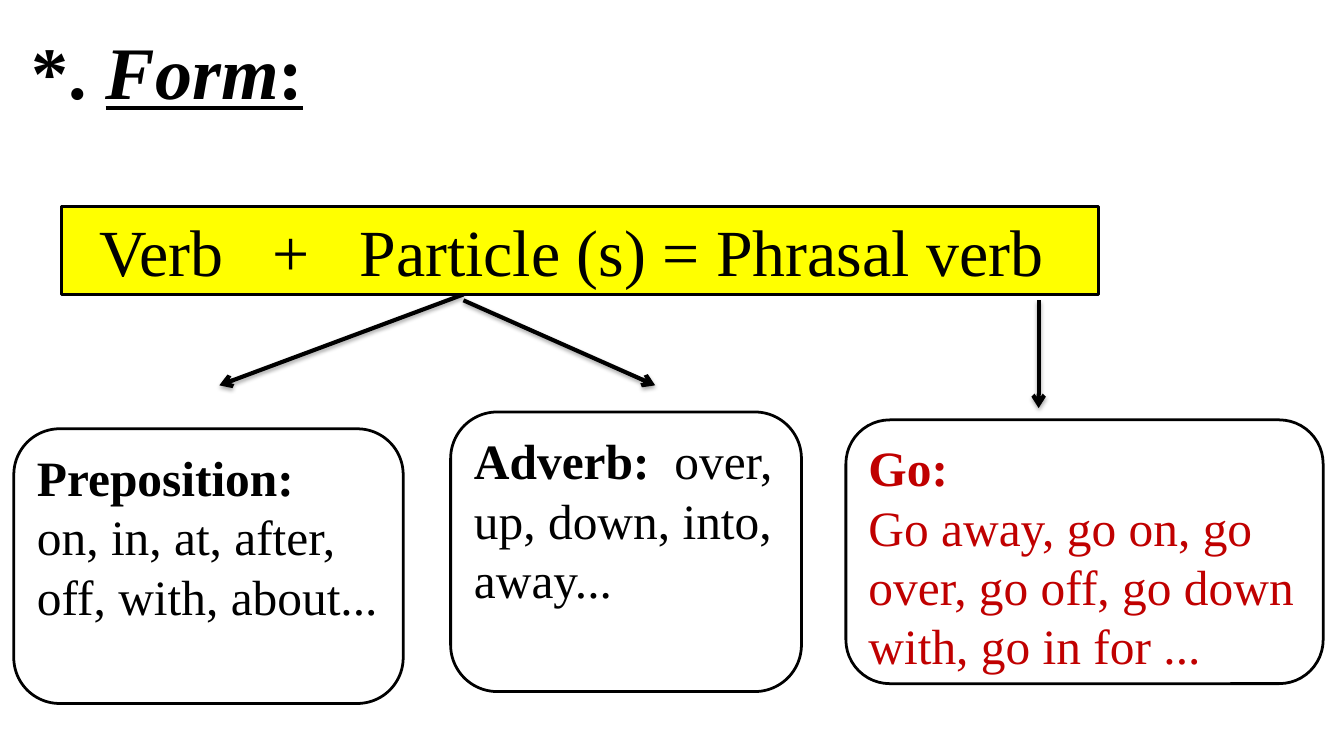
from lxml.etree import SubElement
from pptx import Presentation
from pptx.dml.color import RGBColor
from pptx.enum.shapes import MSO_CONNECTOR, MSO_SHAPE
from pptx.enum.text import MSO_ANCHOR, MSO_AUTO_SIZE, PP_ALIGN
from pptx.oxml.ns import qn
from pptx.util import Inches, Pt

FONT = "Times New Roman"
BLACK, WHITE, YELLOW, RED = "000000", "FFFFFF", "FFFF00", "C00000"


def colour(value):
    """Turn a hex string into a colour."""
    return RGBColor.from_string(value)


def add_run(para, text, size, tint=BLACK, bold=False, italic=False, underline=False, tracking=0):
    """Add one formatted run, with optional tracking in points."""
    run = para.add_run()
    run.text = text
    font = run.font
    font.name, font.size = FONT, Pt(size)
    font.bold, font.italic, font.underline = bold, italic, underline
    font.color.rgb = colour(tint)
    if tracking:
        font._element.set("spc", str(tracking * 100))


def add_title(slide):
    """Place and fill the slide title."""
    title = slide.shapes.title
    title.left, title.top = Inches(0.22), Inches(0.21)
    title.width, title.height = Inches(10.99), Inches(1.01)
    frame = title.text_frame
    frame.auto_size = MSO_AUTO_SIZE.NONE
    frame.vertical_anchor = MSO_ANCHOR.TOP
    para = frame.paragraphs[0]
    para.alignment = PP_ALIGN.LEFT
    para.line_spacing = 1.0
    add_run(para, "*. ", 54, bold=True)
    add_run(para, "Form", 54, bold=True, italic=True, underline=True)
    add_run(para, ":", 54, bold=True, underline=True)


def add_box(slide, kind, bounds, fill):
    """Add an outlined shape and return its text frame."""
    box = slide.shapes.add_shape(kind, *map(Inches, bounds))
    box.shadow.inherit = False
    box.fill.solid()
    box.fill.fore_color.rgb = colour(fill)
    box.line.color.rgb = colour(BLACK)
    box.line.width = Pt(2)
    box.text_frame.word_wrap = True
    return box.text_frame


def add_formula(slide):
    """Add the yellow banner with the phrasal verb formula."""
    frame = add_box(slide, MSO_SHAPE.RECTANGLE, (0.62, 2.09, 10.5, 0.89), YELLOW)
    frame.vertical_anchor = MSO_ANCHOR.MIDDLE
    frame.margin_right = Inches(0.27)
    para = frame.paragraphs[0]
    para.alignment = PP_ALIGN.CENTER
    add_run(para, "Verb", 48)
    add_run(para, " ", 48, tracking=24)
    add_run(para, "+", 48)
    add_run(para, " ", 48, tracking=24)
    add_run(para, "Particle (s) = Phrasal verb", 48)


def add_card(slide, bounds, heading, examples, tint=BLACK, inline=False):
    """Add a rounded card with a bold heading and its examples."""
    frame = add_box(slide, MSO_SHAPE.FLOWCHART_ALTERNATE_PROCESS, bounds, WHITE)
    frame.vertical_anchor = MSO_ANCHOR.TOP
    para = frame.paragraphs[0]
    add_run(para, heading, 36, tint, bold=True)
    if inline:
        add_run(para, " ", 36, tint, tracking=9)
    else:
        para = frame.add_paragraph()
    add_run(para, examples, 36, tint)
    for para in frame.paragraphs:
        para.alignment = PP_ALIGN.LEFT
        para.line_spacing = 1.0


def add_arrow(slide, start, end):
    """Add a black arrow with a soft shadow below it."""
    arrow = slide.shapes.add_connector(MSO_CONNECTOR.STRAIGHT, *map(Inches, start + end))
    arrow.line.color.rgb = colour(BLACK)
    arrow.line.width = Pt(3)
    SubElement(arrow.line._get_or_add_ln(), qn("a:tailEnd"), type="arrow")
    effects = SubElement(arrow._element.spPr, qn("a:effectLst"))
    shadow = SubElement(effects, qn("a:outerShdw"), blurRad=str(Pt(3.1)),
                        dist=str(Pt(1.8)), dir="5400000", rotWithShape="0")
    tint = SubElement(shadow, qn("a:srgbClr"), val=BLACK)
    SubElement(tint, qn("a:alpha"), val="35000")


def main():
    """Build the slide on the form of phrasal verbs."""
    deck = Presentation()
    deck.slide_width, deck.slide_height = Inches(13.6), Inches(7.5)
    slide = deck.slides.add_slide(deck.slide_layouts[5])
    add_title(slide)
    add_arrow(slide, (4.69, 2.98), (2.22, 3.9))
    add_formula(slide)
    add_card(slide, (0.14, 4.34, 3.94, 2.78), "Preposition:",
             "on, in, at, after, off, with, about...")
    add_card(slide, (4.56, 4.17, 3.55, 2.83), "Adverb:",
             "over, up, down, into, away...", inline=True)
    add_card(slide, (8.56, 4.25, 4.83, 2.67), "Go:",
             "Go away, go on, go over, go off, go down with, go in for ...", RED)
    add_arrow(slide, (4.69, 3.04), (6.63, 3.9))
    add_arrow(slide, (10.51, 3.04), (10.51, 4.13))
    deck.save("out.pptx")


if __name__ == "__main__":
    main()
